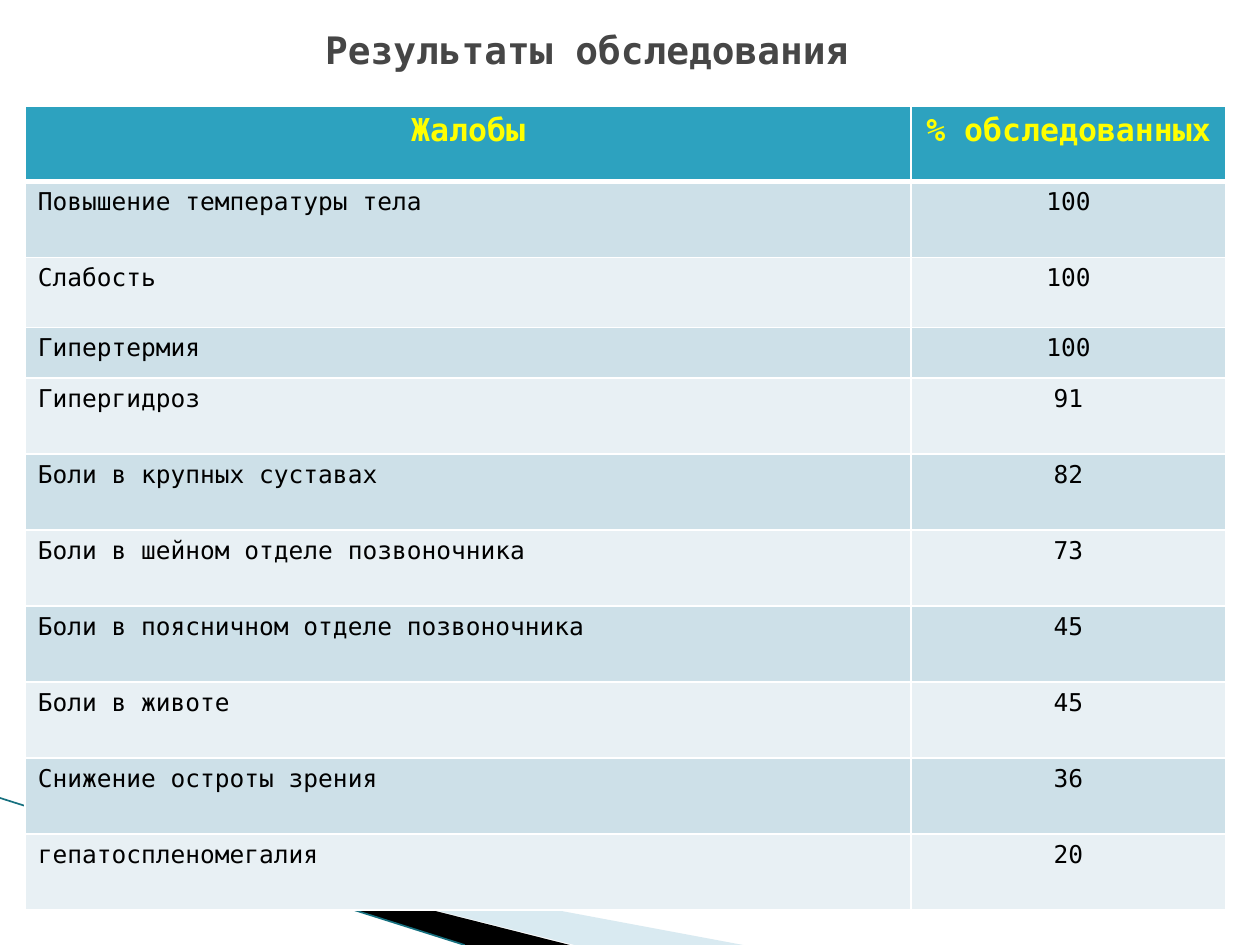
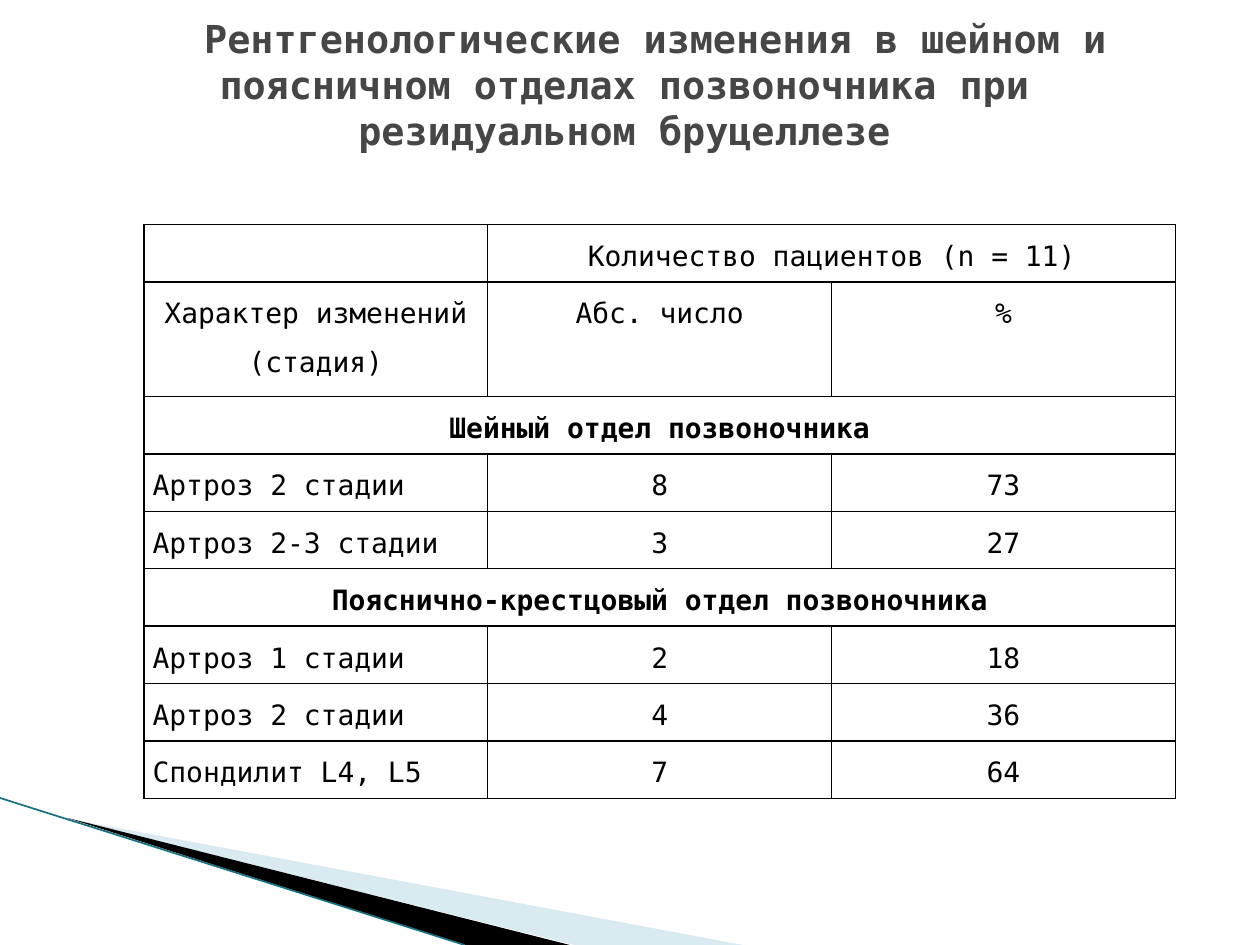
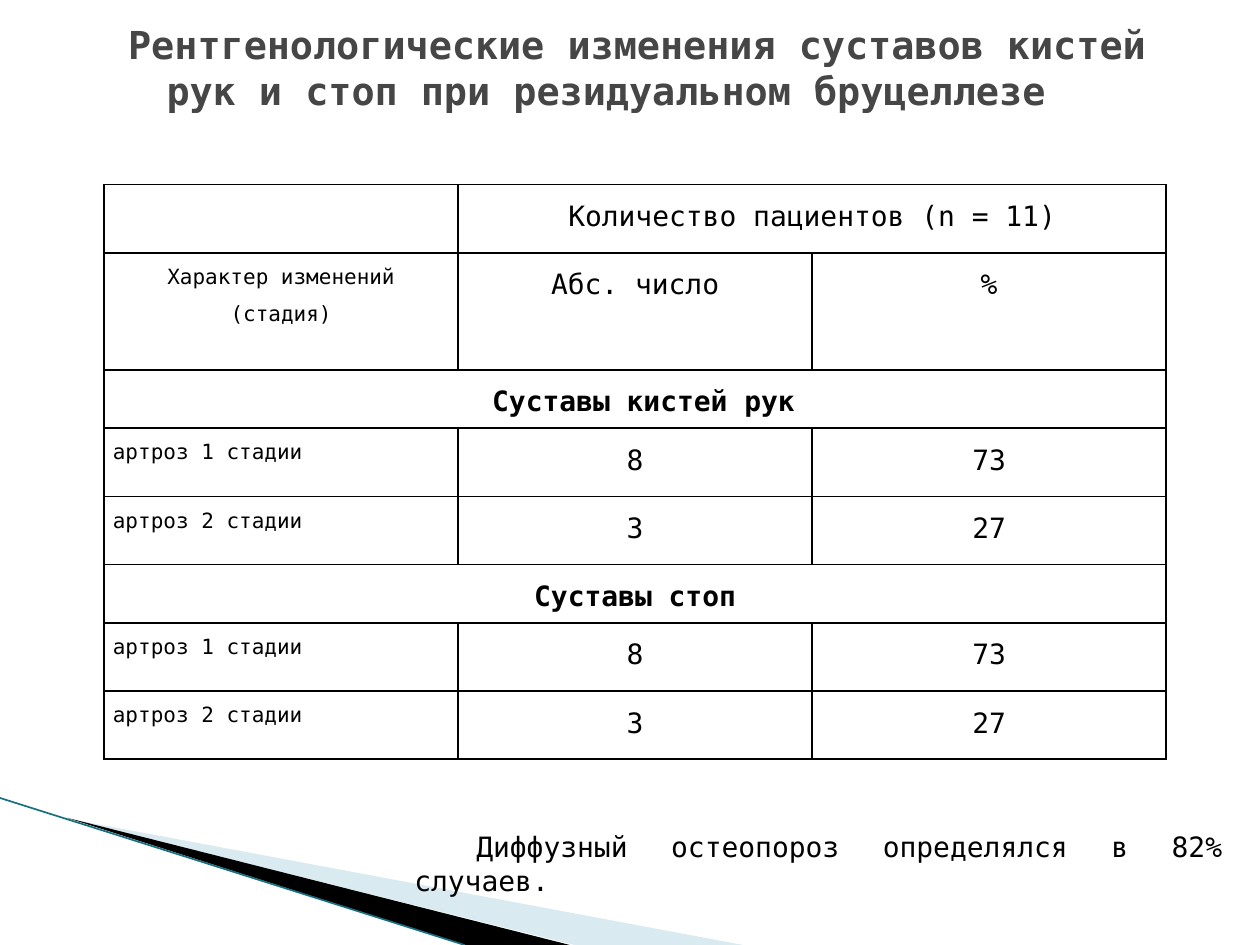
import pptx
import pptx.dml.color
import pptx.enum.dml
import pptx.enum.shapes
import pptx.enum.text
import pptx.oxml.ns
import pptx.util
import lxml.etree
from dataclasses import dataclass

Pt = pptx.util.Pt
ALIGN = pptx.enum.text.PP_ALIGN
ANCHOR = pptx.enum.text.MSO_ANCHOR


@dataclass(frozen=True)
class Theme:
    font: str = "DejaVu Sans Mono"
    ink: str = "000000"
    paper: str = "FFFFFF"
    title: str = "464646"
    header: str = "2DA2BF"
    header_text: str = "FFFF00"
    bands: tuple = ("CDE0E8", "E8F0F4")
    wedge: str = "A0CBDC"
    edge: str = "16707F"
    title_size: float = 22
    header_size: float = 18
    body_size: float = 16
    list_size: float = 14
    small_size: float = 12
    indent: float = 35.4


T = Theme()

# Content: a row shorter than the table has its last cell merged to the right edge
COUNT_HEAD = [
    ("", "Количество пациентов (n = 11)"),
    ("Характер изменений (стадия)", "Абс. число", "%"),
]

SLIDES = [
    dict(
        title="Результаты обследования",
        title_box=(178.6, 15.1, 365.8, 26.6),
        title_format=dict(size=21.6),
        title_anchor=ANCHOR.MIDDLE,
        title_inset=0,
        at=(14.4, 60.5),
        cols=(506.2, 180),
        heights=[43.4] * 2 + [40, 28.8] + [43.4] * 7,
        banded=True,
        label_size=T.list_size,
        rows=[
            ("Жалобы", "% обследованных"),
            ("Повышение температуры тела", "100"),
            ("Слабость", "100"),
            ("Гипертермия", "100"),
            ("Гипергидроз", "91"),
            ("Боли в крупных суставах", "82"),
            ("Боли в шейном отделе позвоночника", "73"),
            ("Боли в поясничном отделе позвоночника", "45"),
            ("Боли в животе", "45"),
            ("Снижение остроты зрения", "36"),
            ("гепатоспленомегалия", "20"),
        ],
    ),
    dict(
        title="Рентгенологические изменения в шейном и поясничном отделах "
              "позвоночника при резидуальном бруцеллезе",
        title_box=(70.6, 2.9, 572.4, 108.7),
        title_format=dict(align=ALIGN.CENTER, indent=T.indent),
        title_anchor=ANCHOR.TOP,
        title_inset=5.5,
        at=(82.2, 128.2),
        cols=(196.5,) * 3,
        heights=[32.8, 65.6] + [32.8] * 7,
        banded=False,
        label_size=T.body_size,
        rows=COUNT_HEAD + [
            ("Шейный отдел позвоночника",),
            ("Артроз 2 стадии", "8", "73"),
            ("Артроз 2-3 стадии", "3", "27"),
            ("Пояснично-крестцовый отдел позвоночника",),
            ("Артроз 1 стадии", "2", "18"),
            ("Артроз 2 стадии", "4", "36"),
            ("Спондилит L4, L5", "7", "64"),
        ],
    ),
    dict(
        title="Рентгенологические изменения суставов кистей рук и стоп "
              "при резидуальном бруцеллезе",
        title_box=(20.2, 7.9, 652.3, 60.5),
        title_format=dict(align=ALIGN.CENTER, indent=T.indent),
        title_anchor=ANCHOR.MIDDLE,
        title_inset=3.6,
        at=(59.5, 105.5),
        cols=(202.3,) * 3,
        heights=[39, 66.9] + [33.3, 39, 39] * 2,
        banded=False,
        label_size=T.small_size,
        rows=COUNT_HEAD + [
            (" Суставы кистей рук",),
            ("артроз 1 стадии", "8", "73"),
            ("артроз 2 стадии", "3", "27"),
            ("Суставы стоп",),
            ("артроз 1 стадии", "8", "73"),
            ("артроз 2 стадии", "3", "27"),
        ],
        note="Диффузный остеопороз определялся в 82% случаев.",
        note_box=(229.7, 471, 475.9, 44.6),
    ),
]

# Corner band: outlines of the two wedges and the edge line
WEDGES = [
    (T.wedge, 40, [(39.6, 468), (424.6, 540), (328.3, 540)]),
    (T.ink, 100, [(38.2, 467.3), (325.7, 540), (265.7, 540)]),
]
EDGE = (0, 456, 265.5, 540)


def rgb(value):
    return pptx.dml.color.RGBColor.from_string(value)


def add_xml(parent, tag, **attrs):
    return lxml.etree.SubElement(parent, pptx.oxml.ns.qn(tag), attrs)


def write(tf, text, size=T.body_size, color=T.ink, bold=False,
          align=ALIGN.LEFT, spacing=1.0, indent=0):
    p = tf.paragraphs[0]
    p.alignment = align
    p.line_spacing = spacing
    p.space_before = p.space_after = Pt(0)
    if indent:
        pPr = p._p.get_or_add_pPr()
        pPr.set("marL", "0")
        pPr.set("indent", str(Pt(indent)))
    r = p.add_run()
    r.text = text
    r.font.name = T.font
    r.font.size = Pt(size)
    r.font.bold = bold
    r.font.color.rgb = rgb(color)


def set_frame(tf, anchor, inset=3.6):
    tf.word_wrap = True
    tf.auto_size = pptx.enum.text.MSO_AUTO_SIZE.NONE
    tf.vertical_anchor = anchor
    tf.margin_left = tf.margin_right = Pt(7.2)
    tf.margin_top = tf.margin_bottom = Pt(inset)


def draw_band(s):
    for color, alpha, points in WEDGES:
        corners = [(Pt(x), Pt(y)) for x, y in points]
        builder = s.shapes.build_freeform(*corners[0], scale=1.0)
        builder.add_line_segments(corners[1:], close=True)
        sp = builder.convert_to_shape()
        sp.shadow.inherit = False
        sp.fill.solid()
        sp.fill.fore_color.rgb = rgb(color)
        if alpha < 100:
            clr = sp.fill._xPr.find(".//" + pptx.oxml.ns.qn("a:srgbClr"))
            add_xml(clr, "a:alpha", val=str(alpha * 1000))
        sp.line.fill.background()
    line = s.shapes.add_connector(
        pptx.enum.shapes.MSO_CONNECTOR.STRAIGHT, *map(Pt, EDGE))
    line.line.color.rgb = rgb(T.edge)
    line.line.width = Pt(0.95)
    add_xml(line._element.spPr, "a:effectLst")


def draw_title(s, spec):
    sp = s.shapes.title
    sp.left, sp.top, sp.width, sp.height = map(Pt, spec["title_box"])
    set_frame(sp.text_frame, spec["title_anchor"], spec["title_inset"])
    style = dict(size=T.title_size, color=T.title, bold=True)
    write(sp.text_frame, spec["title"], **(style | spec["title_format"]))


def set_borders(cell, color, bottom=1):
    tcPr = cell._tc.get_or_add_tcPr()
    for i, side in enumerate("LRTB"):
        width = bottom if side == "B" else 1
        ln = add_xml(tcPr, "a:ln" + side, w=str(Pt(width)))
        add_xml(add_xml(ln, "a:solidFill"), "a:srgbClr", val=color)
        tcPr.insert(i, ln)


def cell_format(spec, i, j, row):
    """Text format of the cell in row i, column j."""
    if spec["banded"]:
        if i == 0:
            return dict(size=T.header_size, color=T.header_text, bold=True,
                        align=ALIGN.CENTER)
        return dict(size=spec["label_size"],
                    align=ALIGN.CENTER if j else ALIGN.LEFT)
    section = len(row) == 1
    label = j == 0 and not section
    justified = label and i >= len(COUNT_HEAD)
    return dict(size=spec["label_size"] if label else T.body_size,
                bold=section, spacing=1.5,
                align=ALIGN.JUSTIFY if justified else ALIGN.CENTER)


def draw_table(s, spec):
    rows, cols, heights = spec["rows"], spec["cols"], spec["heights"]
    size = (sum(cols), sum(heights))
    table = s.shapes.add_table(
        len(rows), len(cols), *map(Pt, spec["at"] + size)).table
    table.first_row = table.horz_banding = False
    for column, width in zip(table.columns, cols):
        column.width = Pt(width)
    for i, row in enumerate(rows):
        table.rows[i].height = Pt(heights[i])
        for j in range(len(cols)):
            cell = table.cell(i, j)
            if spec["banded"]:
                cell.fill.solid()
                cell.fill.fore_color.rgb = rgb(
                    T.bands[(i - 1) % 2] if i else T.header)
                set_borders(cell, T.paper, bottom=1 if i else 3)
            else:
                cell.fill.background()
                cell.margin_left = cell.margin_right = Pt(5.04)
                cell.margin_top = cell.margin_bottom = 0
                set_borders(cell, T.ink)
            if j < len(row) and row[j]:
                write(cell.text_frame, row[j], **cell_format(spec, i, j, row))
        if len(row) < len(cols):
            table.cell(i, len(row) - 1).merge(table.cell(i, len(cols) - 1))


def draw_note(s, spec):
    tf = s.shapes.add_textbox(*map(Pt, spec["note_box"])).text_frame
    set_frame(tf, ANCHOR.MIDDLE)
    write(tf, spec["note"], align=ALIGN.JUSTIFY, indent=T.indent)


def main():
    prs = pptx.Presentation()
    prs.slide_width, prs.slide_height = Pt(720), Pt(540)
    for spec in SLIDES:
        s = prs.slides.add_slide(prs.slide_layouts[5])
        draw_band(s)
        draw_title(s, spec)
        draw_table(s, spec)
        if "note" in spec:
            draw_note(s, spec)
    prs.save("out.pptx")


if __name__ == "__main__":
    main()
